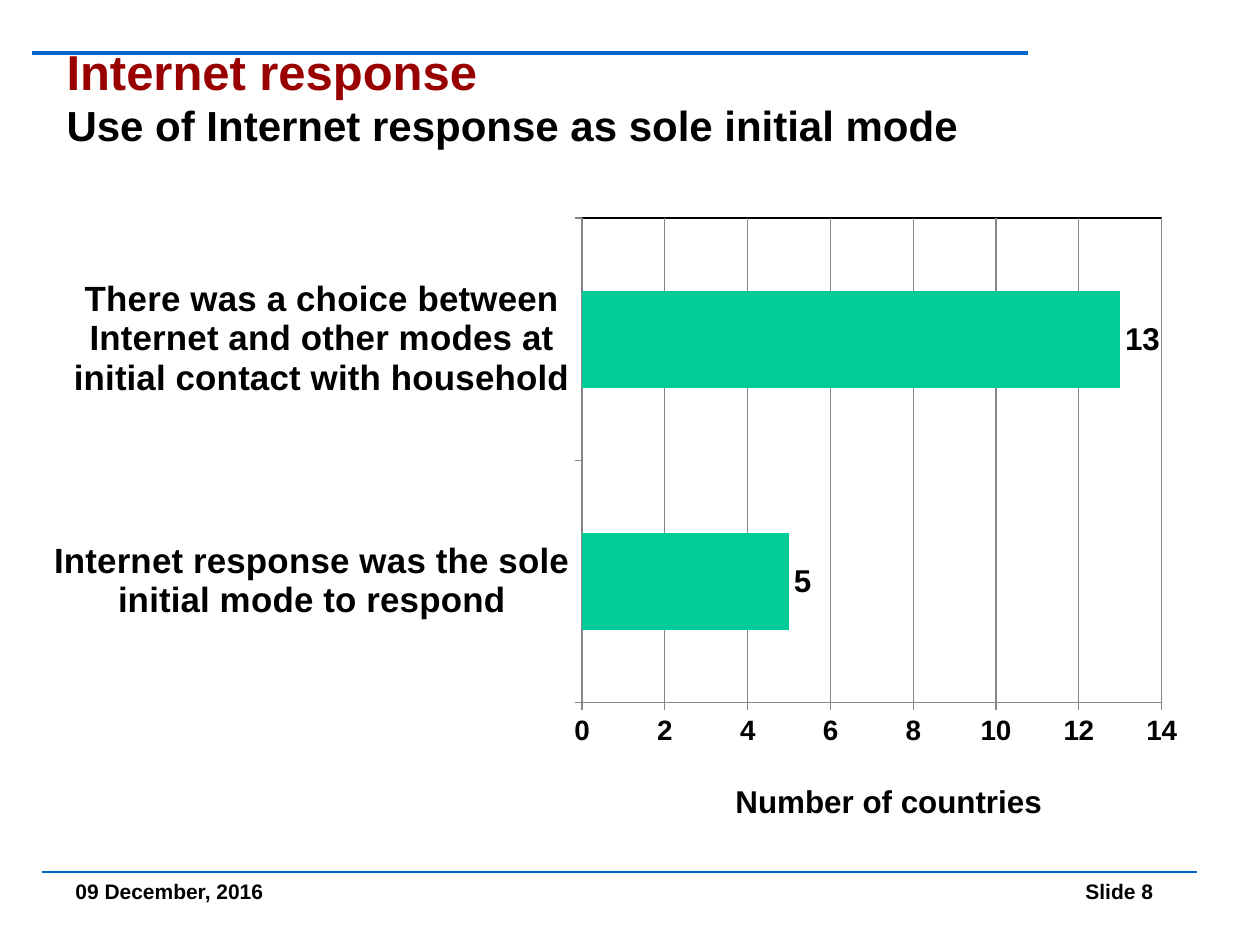
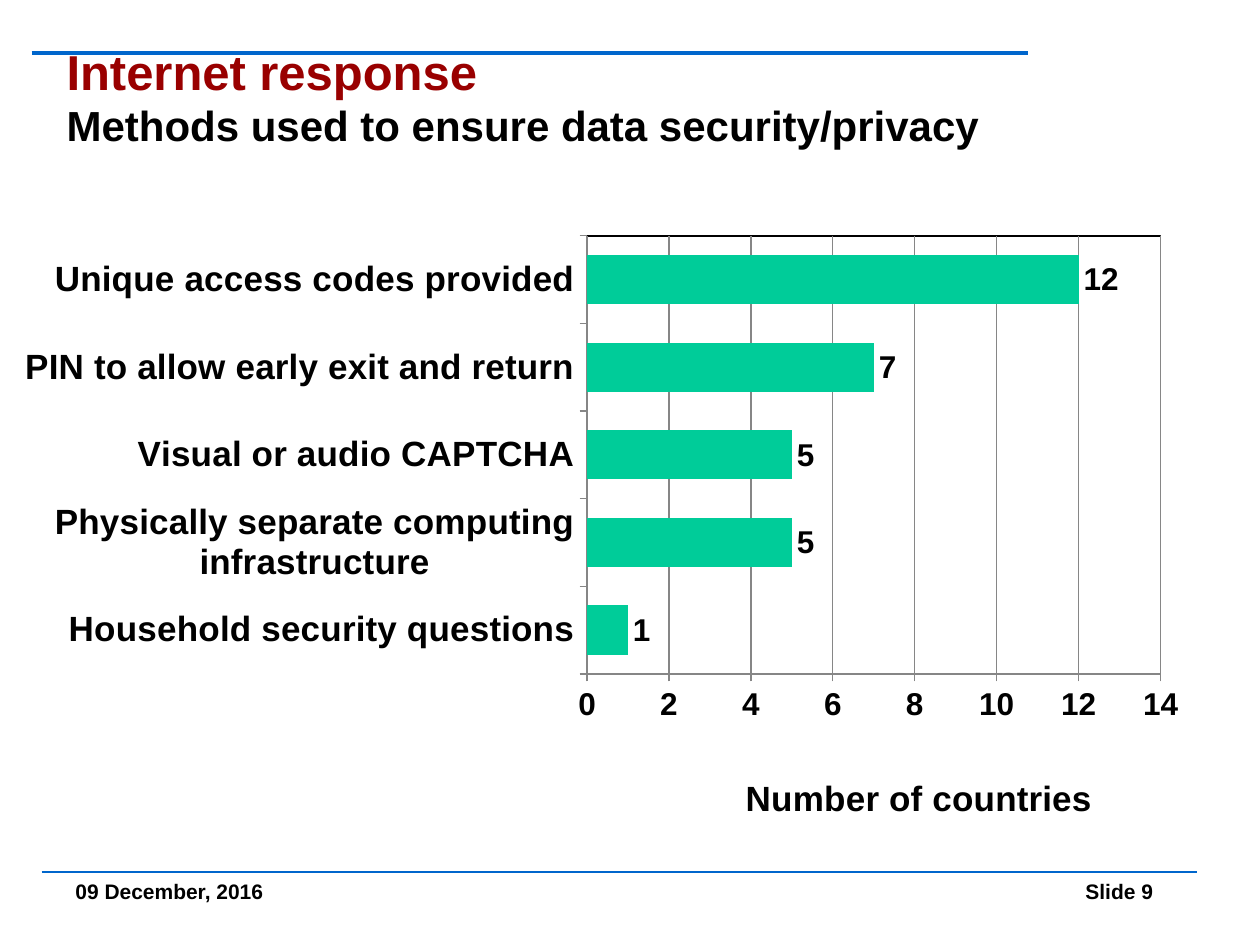
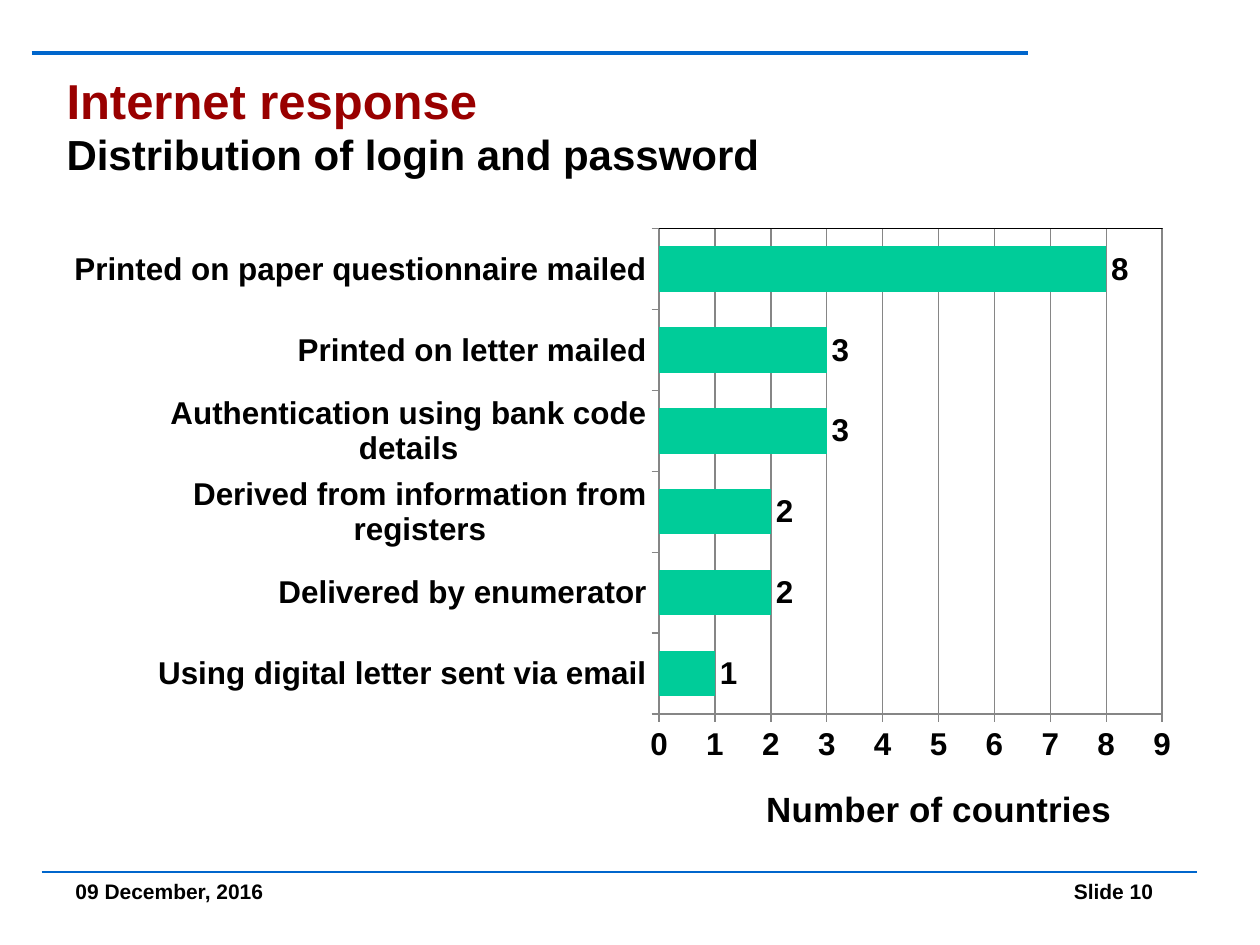
from lxml import etree
from pptx import Presentation
from pptx import util as u
from pptx.chart import data as chart_data
from pptx.dml.color import RGBColor
from pptx.enum import chart as ch
from pptx.enum import shapes, text
from pptx.oxml import parse_xml
from pptx.oxml.ns import nsdecls, qn

BLUE = RGBColor(0x00, 0x66, 0xCC)
DARK_RED = RGBColor(0x99, 0x00, 0x00)
BLACK = RGBColor(0x00, 0x00, 0x00)
GREEN = RGBColor(0x00, 0xCC, 0x99)
GREY = RGBColor(0x86, 0x86, 0x86)

FONT = "Arial"
DATE = "09 December, 2016"
TOPIC = "Internet response"
MEASURE = "Number of countries"


def place(part, index, inner=False, **fractions):
    """Give a chart part a fixed place, in fractions of the chart."""
    for old in part.findall(qn("c:layout")):
        part.remove(old)
    settings = {"layoutTarget": "inner"} if inner else {}
    settings.update({f"{side}Mode": "edge" for side in "xy"})
    settings.update(fractions)
    marks = "".join(f'<c:{tag} val="{value}"/>' for tag, value in settings.items())
    part.insert(index, parse_xml(
        f'<c:layout {nsdecls("c")}><c:manualLayout>{marks}</c:manualLayout></c:layout>'))


class Deck:
    def __init__(self):
        self.prs = Presentation()
        self.prs.slide_width = u.Inches(10)
        self.prs.slide_height = u.Inches(7.5)
        self.slide = None

    def new_slide(self, number):
        """Start a slide with the shared rules and footer."""
        self.slide = self.prs.slides.add_slide(self.prs.slide_layouts[6])
        self.rule(0.33, 9.5, 6.92, 1.5)
        self.rule(0.25, 8.16, 0.42, 2.25)
        self.textbox(0.5, 6.92, 2.08, 0.5, [(DATE, 12, BLACK)])
        self.textbox(7.17, 6.92, 2.08, 0.5, [(f"Slide {number}", 12, BLACK)],
                     align=text.PP_ALIGN.RIGHT)

    def rule(self, left, right, y, width):
        line = self.slide.shapes.add_connector(
            shapes.MSO_CONNECTOR.STRAIGHT,
            u.Inches(left), u.Inches(y), u.Inches(right), u.Inches(y))
        line.line.color.rgb = BLUE
        line.line.width = u.Pt(width)
        etree.SubElement(line._element.spPr, qn("a:effectLst"))

    def textbox(self, left, top, width, height, lines,
                align=text.PP_ALIGN.LEFT, anchor=text.MSO_ANCHOR.TOP):
        box = self.slide.shapes.add_textbox(
            u.Inches(left), u.Inches(top), u.Inches(width), u.Inches(height))
        frame = box.text_frame
        frame.word_wrap = True
        frame.vertical_anchor = anchor
        paragraph = frame.paragraphs[0]
        paragraph.alignment = align
        for i, (words, size, color) in enumerate(lines):
            if i:
                paragraph.add_line_break()
            run = paragraph.add_run()
            run.text = words
            self.style(run.font, size, color)

    def style(self, font, size, color=BLACK):
        font.name = FONT
        font.size = u.Pt(size)
        font.bold = True
        font.color.rgb = color

    def title(self, subtitle, top):
        self.textbox(0.43, top, 9.16, 0.94,
                     [(TOPIC, 28, DARK_RED), (subtitle, 24, BLACK)],
                     anchor=text.MSO_ANCHOR.MIDDLE)

    def bar_chart(self, box, answers, plot_area, caption_at, caption_size,
                  category_size, value_size, gap, top_value, step):
        """Draw answers, listed from bottom to top, as horizontal bars."""
        data = chart_data.CategoryChartData()
        data.categories = list(answers)
        data.add_series(MEASURE, list(answers.values()))
        chart = self.slide.shapes.add_chart(
            ch.XL_CHART_TYPE.BAR_CLUSTERED, *map(u.Inches, box), data).chart
        chart.has_legend = False
        chart.font.name = FONT
        chart.font.size = u.Pt(10)
        chart.font.color.rgb = BLACK

        # Bars and their values
        plot = chart.plots[0]
        plot.gap_width = gap
        plot.vary_by_categories = False
        bars = plot.series[0]
        bars.invert_if_negative = False
        bars.format.fill.solid()
        bars.format.fill.fore_color.rgb = GREEN
        labels = bars.data_labels
        labels.show_value = True
        labels.position = ch.XL_LABEL_POSITION.OUTSIDE_END
        self.style(labels.font, 18)

        # Axes and grid
        values = chart.value_axis
        for axis, size in ((chart.category_axis, category_size), (values, value_size)):
            axis.major_tick_mark = ch.XL_TICK_MARK.OUTSIDE
            axis.format.line.color.rgb = GREY
            self.style(axis.tick_labels.font, size)
        values.minimum_scale = 0
        values.maximum_scale = top_value
        values.major_unit = step
        values.has_major_gridlines = True
        values.major_gridlines.format.line.color.rgb = GREY

        # Caption below the plot
        chart.has_title = True
        caption = chart.chart_title.text_frame.paragraphs[0].add_run()
        caption.text = MEASURE
        self.style(caption.font, caption_size)
        x, y = caption_at
        place(chart.element.xpath("c:chart/c:title")[0], 1, x=x, y=y)

        # Plot place and frame
        area = chart.element.xpath("c:chart/c:plotArea")[0]
        x, y, w, h = plot_area
        place(area, 0, inner=True, x=x, y=y, w=w, h=h)
        area.append(parse_xml(
            f'<c:spPr {nsdecls("c", "a")}><a:noFill/><a:ln w="9525"><a:solidFill>'
            f'<a:srgbClr val="{BLACK}"/></a:solidFill></a:ln></c:spPr>'))


def main():
    deck = Deck()

    # Sole initial mode
    deck.new_slide(8)
    deck.title("Use of Internet response as sole initial mode", 0.29)
    deck.bar_chart(
        (0.43, 1.47, 9.06, 5.2),
        {"Internet response was the sole initial mode to respond": 5,
         "There was a choice between Internet and other modes at "
         "initial contact with household": 13},
        plot_area=(0.46, 0.05, 0.51, 0.74), caption_at=(0.59, 0.9), caption_size=18,
        category_size=20, value_size=16, gap=150, top_value=14, step=2)

    # Security and privacy
    deck.new_slide(9)
    deck.title("Methods used to ensure data security/privacy", 0.29)
    deck.bar_chart(
        (0.2, 1.62, 9.29, 5.04),
        {"Household security questions": 1,
         "Physically separate computing infrastructure": 5,
         "Visual or audio CAPTCHA": 5,
         "PIN to allow early exit and return": 7,
         "Unique access codes provided": 12},
        plot_area=(0.48, 0.05, 0.49, 0.69), caption_at=(0.61, 0.89), caption_size=20,
        category_size=20, value_size=18, gap=78, top_value=14, step=2)

    # Login and password
    deck.new_slide(10)
    deck.title("Distribution of login and password", 0.52)
    deck.bar_chart(
        (0.59, 1.55, 8.9, 5.28),
        {"Using digital letter sent via email": 1,
         "Delivered by enumerator": 2,
         "Derived from information from registers": 2,
         "Authentication using bank code details": 3,
         "Printed on letter mailed": 3,
         "Printed on paper questionnaire mailed": 8},
        plot_area=(0.52, 0.05, 0.45, 0.73), caption_at=(0.61, 0.88), caption_size=20,
        category_size=18, value_size=18, gap=78, top_value=9, step=1)

    deck.prs.save("out.pptx")


if __name__ == "__main__":
    main()
